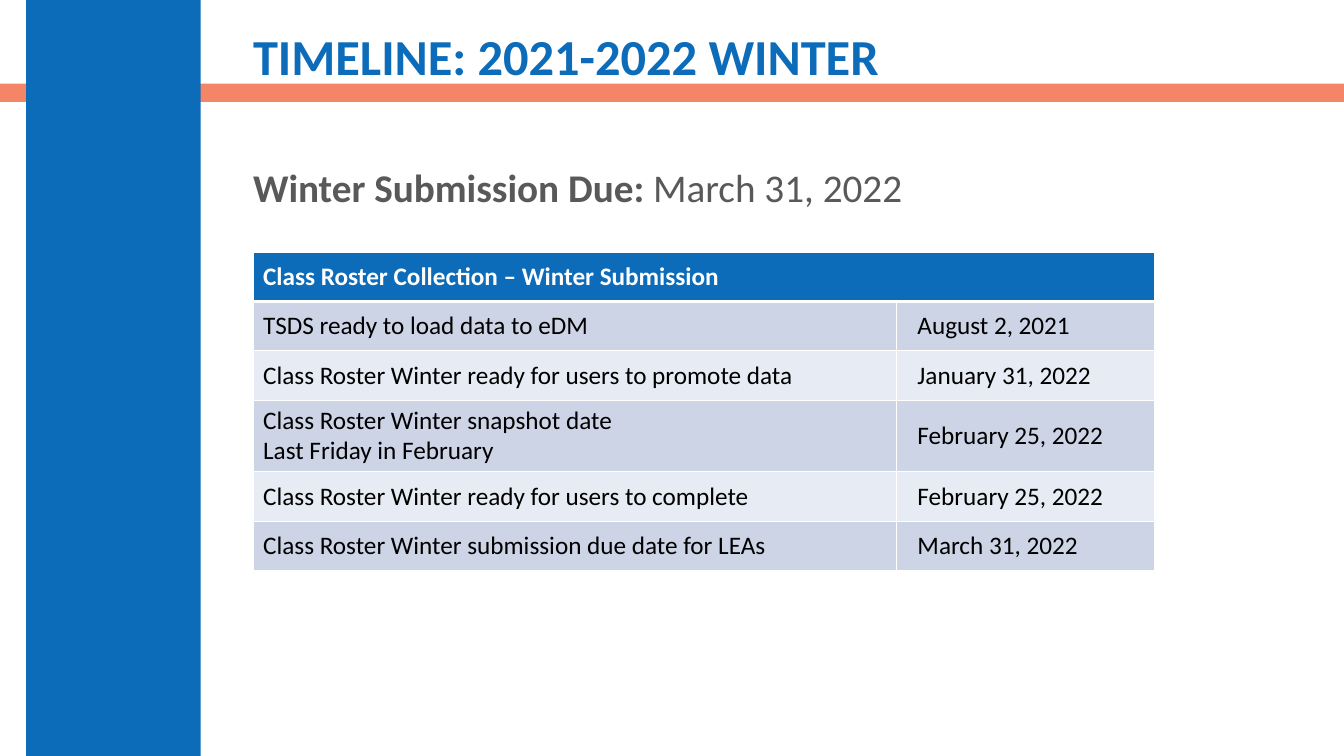
from lxml.etree import SubElement as Sub
from pptx import Presentation
from pptx.dml.color import RGBColor as Rgb
from pptx.enum.shapes import MSO_SHAPE as Kind
from pptx.enum.text import MSO_ANCHOR as Anchor, MSO_AUTO_SIZE as Auto, PP_ALIGN as Align
from pptx.oxml.ns import qn
from pptx.util import Inches, Pt

HUES = {"blue": "0D6CB9", "coral": "F16038", "gray": "595959", "white": "FFFFFF",
        "black": "000000", "dark": "CCD4E6", "light": "E7EBF3"}
HEAD = "Class Roster Collection – Winter Submission"
DATES = [
    (["TSDS ready to load data to eDM"], "August 2, 2021"),
    (["Class Roster Winter ready for users to promote data"], "January 31, 2022"),
    (["Class Roster Winter snapshot date", "Last Friday in February"], "February 25, 2022"),
    (["Class Roster Winter ready for users to complete"], "February 25, 2022"),
    (["Class Roster Winter submission due date for LEAs"], "March 31, 2022"),
]


class Deck:
    """Holds the style and the current slide."""

    def __init__(self):
        self.prs = Presentation()
        self.prs.slide_width, self.prs.slide_height = Inches(13.33), Inches(7.5)
        self.slide = self.prs.slides.add_slide(self.prs.slide_layouts[1])
        self.title, self.body = self.slide.placeholders

    def hue(self, name):
        return Rgb.from_string(HUES[name])

    def run(self, para, text, size, color, bold=False):
        run = para.add_run()
        run.text = text
        font = run.font
        font.name, font.size, font.bold = "Calibri", Pt(size), bold
        font.color.rgb = self.hue(color)

    def bar(self, box, color, alpha=100):
        bar = self.slide.shapes.add_shape(Kind.RECTANGLE, *map(Inches, box))
        bar.shadow.inherit = False
        bar.fill.solid()
        bar.fill.fore_color.rgb = self.hue(color)
        bar.line.fill.background()
        if alpha < 100:
            tint = bar.element.spPr.find(qn("a:solidFill"))[0]
            Sub(tint, qn("a:alpha"), val=str(alpha * 1000))
        self.title.element.addprevious(bar.element)

    def holder(self, shape, box, anchor, runs):
        shape.left, shape.top, shape.width, shape.height = map(Inches, box)
        frame = shape.text_frame
        frame.word_wrap, frame.auto_size = True, Auto.NONE
        frame.vertical_anchor = anchor
        para = frame.paragraphs[0]
        props = para._p.get_or_add_pPr()
        props.set("marL", "0")
        props.set("indent", "0")
        Sub(props, qn("a:buNone"))
        para.alignment, para.line_spacing, para.space_before = Align.LEFT, 0.9, Pt(0)
        for item in runs:
            self.run(para, *item)

    def edge(self, cell, side, width):
        line = Sub(cell._tc.get_or_add_tcPr(), qn("a:ln" + side), w=str(Pt(width)))
        Sub(Sub(line, qn("a:solidFill")), qn("a:srgbClr"), val=HUES["white"])

    def cell(self, cell, lines, fill, color, bold, row):
        cell.vertical_anchor = Anchor.MIDDLE
        for side in "LRTB":
            thick = (row, side) in ((0, "B"), (1, "T"))
            self.edge(cell, side, 2.16 if thick else 0.72)
        cell.fill.solid()
        cell.fill.fore_color.rgb = self.hue(fill)
        frame = cell.text_frame
        for num, text in enumerate(lines):
            para = frame.add_paragraph() if num else frame.paragraphs[0]
            self.run(para, text, 18, color, bold)

    def table(self, box, cols, head, rows):
        table = self.slide.shapes.add_table(len(rows) + 1, len(cols), *map(Inches, box)).table
        for col, width in zip(table.columns, cols):
            col.width = Inches(width)
        for row in table.rows:
            row.height = Inches(0.49)
        table.cell(0, 0).merge(table.cell(0, 1))
        self.cell(table.cell(0, 0), [head], "blue", "white", True, 0)
        self.cell(table.cell(0, 1), [], "blue", "white", True, 0)
        for num, (lines, date) in enumerate(rows, 1):
            fill = "dark" if num % 2 else "light"
            self.cell(table.cell(num, 0), lines, fill, "black", False, num)
            table.cell(num, 1).margin_left = Inches(0.21)
            self.cell(table.cell(num, 1), [date], fill, "black", False, num)
            if len(lines) > 1:
                table.rows[num].height = Inches(0.71)


def main():
    deck = Deck()
    deck.bar((0, 0.83, 13.33, 0.18), "coral", 76)
    deck.bar((0.26, 0, 1.73, 7.5), "blue")
    deck.holder(deck.title, (2.41, 0.18, 10.53, 0.82), Anchor.MIDDLE,
                [("TIMELINE: 2021-2022 WINTER", 36, "blue", True)])
    deck.holder(deck.body, (2.41, 1.62, 9.83, 4.76), Anchor.TOP,
                [("Winter Submission Due: ", 28, "gray", True),
                 ("March 31, 2022", 28, "gray")])
    deck.table((2.51, 2.5, 8.94, 3.13), (6.38, 2.56), HEAD, DATES)
    deck.prs.save("out.pptx")


if __name__ == "__main__":
    main()
